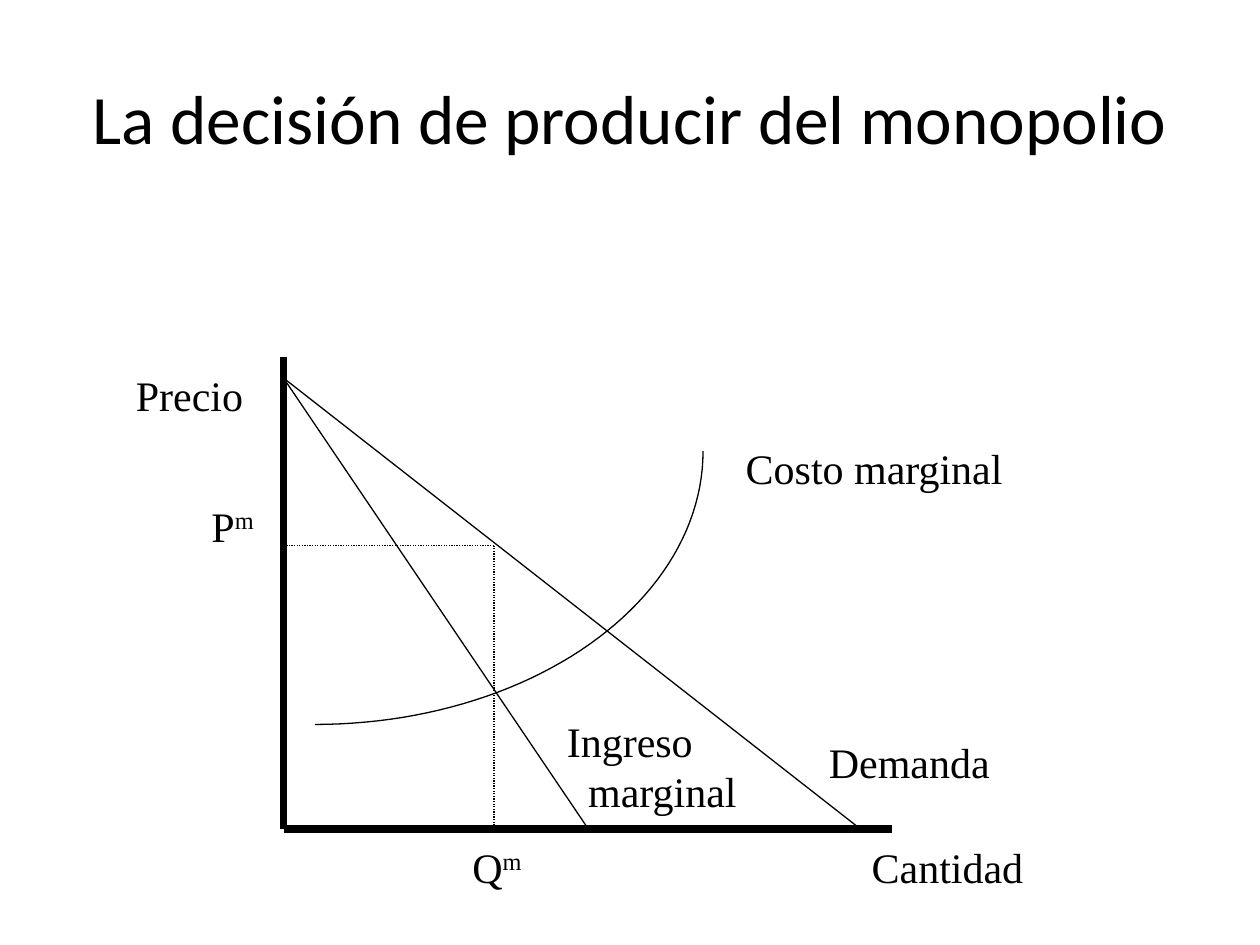
from math import cos, pi, sin

from pptx import Presentation
from pptx.dml.color import RGBColor
from pptx.enum.dml import MSO_LINE_DASH_STYLE as Dash
from pptx.enum.shapes import MSO_CONNECTOR as Connector
from pptx.enum.text import MSO_ANCHOR as Anchor, PP_ALIGN as Align
from pptx.oxml.xmlchemy import OxmlElement
from pptx.util import Inches, Pt

COLORS = {"ink": "000000"}
INK = RGBColor.from_string(COLORS["ink"])
TITLE = "La decisión de producir del monopolio"
TITLE_FORMAT = {"name": "Calibri", "size": Pt(39.6)}
LABEL_FORMAT = {"name": "Times New Roman", "size": Pt(24)}

AXIS_X, AXIS_Y = 2.25, 6.58
PRICE_TOP = 3
PRICE_M, QUANTITY_M = 4.33, 3.92
ORIGIN = (AXIS_X, AXIS_Y)
CHOKE_PRICE = (AXIS_X, PRICE_TOP)
MONOPOLY_POINT = (QUANTITY_M, PRICE_M)

AXIS = {"width": Pt(4.5)}
CURVE = {"width": Pt(0.75)}
GUIDE = {"width": Pt(0.75), "dash_style": Dash.ROUND_DOT}
LINES = [
    ((AXIS_X, 2.83), ORIGIN, AXIS),
    (ORIGIN, (7.08, AXIS_Y), AXIS),
    (CHOKE_PRICE, (6.83, AXIS_Y), CURVE),
    (CHOKE_PRICE, (4.67, AXIS_Y), CURVE),
    (MONOPOLY_POINT, (AXIS_X, PRICE_M), GUIDE),
    (MONOPOLY_POINT, (QUANTITY_M, AXIS_Y), GUIDE),
]
COST_CENTER, COST_RADII, COST_STEPS = (2.5, 3.58), (3.08, 2.17), 48

LABELS = [
    ((6.82, 6.63, 1.4, 0.5), [("Cantidad", "", 0)]),
    ((0.98, 2.88, 1.05, 0.5), [("Precio", "", 0)]),
    ((6.48, 5.8, 1.48, 0.5), [("Demanda", "", 0)]),
    ((4.4, 5.63, 1.55, 0.9), [("Ingreso", "", 0), ("marginal", "", 0.17)]),
    ((5.82, 3.46, 2.24, 0.5), [("Costo marginal", "", 0)]),
    ((3.65, 6.63, 0.62, 0.5), [("Q", "m", 0)]),
    ((1.58, 3.92, 0.56, 0.5), [("P", "m", 0)]),
]


def apply(target, values):
    for key, value in values.items():
        setattr(target, key, value)


def add_run(paragraph, text, font_format):
    run = paragraph.add_run()
    run.text = text
    apply(run.font, font_format)
    run.font.color.rgb = INK
    return run


def style_line(line, line_format):
    line.color.rgb = INK
    apply(line, line_format)


def add_line(slide, start, end, line_format):
    points = [Inches(value) for value in (*start, *end)]
    connector = slide.shapes.add_connector(Connector.STRAIGHT, *points)
    style_line(connector.line, line_format)
    connector._element.spPr.append(OxmlElement("a:effectLst"))


def add_marginal_cost(slide):
    angles = [pi / 2 * (1 - step / COST_STEPS) for step in range(COST_STEPS + 1)]
    points = [
        (Inches(COST_CENTER[0] + COST_RADII[0] * cos(angle)),
         Inches(COST_CENTER[1] + COST_RADII[1] * sin(angle)))
        for angle in angles
    ]
    builder = slide.shapes.build_freeform(*points[0])
    builder.add_line_segments(points[1:], close=False)
    cost = builder.convert_to_shape()
    cost.fill.background()
    cost.shadow.inherit = False
    style_line(cost.line, CURVE)


def add_label(slide, box, rows):
    frame = slide.shapes.add_textbox(*map(Inches, box)).text_frame
    frame.word_wrap = False
    for index, (text, superscript, indent) in enumerate(rows):
        paragraph = frame.add_paragraph() if index else frame.paragraphs[0]
        add_run(paragraph, text, LABEL_FORMAT)
        if superscript:
            run = add_run(paragraph, superscript, LABEL_FORMAT)
            run._r.get_or_add_rPr().set("baseline", "30000")
        if indent:
            paragraph._p.get_or_add_pPr().set("marL", str(Inches(indent)))


def main():
    deck = Presentation()
    apply(deck, {"slide_width": Inches(10), "slide_height": Inches(7.5)})
    slide = deck.slides.add_slide(deck.slide_layouts[5])
    title = slide.shapes.title
    apply(title, {"left": Inches(0.5), "top": Inches(0.3),
                  "width": Inches(9), "height": Inches(1.25)})
    title.text_frame.vertical_anchor = Anchor.MIDDLE
    heading = title.text_frame.paragraphs[0]
    heading.alignment = Align.CENTER
    add_run(heading, TITLE, TITLE_FORMAT)
    for start, end, line_format in LINES:
        add_line(slide, start, end, line_format)
    add_marginal_cost(slide)
    for box, rows in LABELS:
        add_label(slide, box, rows)
    deck.save("out.pptx")


if __name__ == "__main__":
    main()
